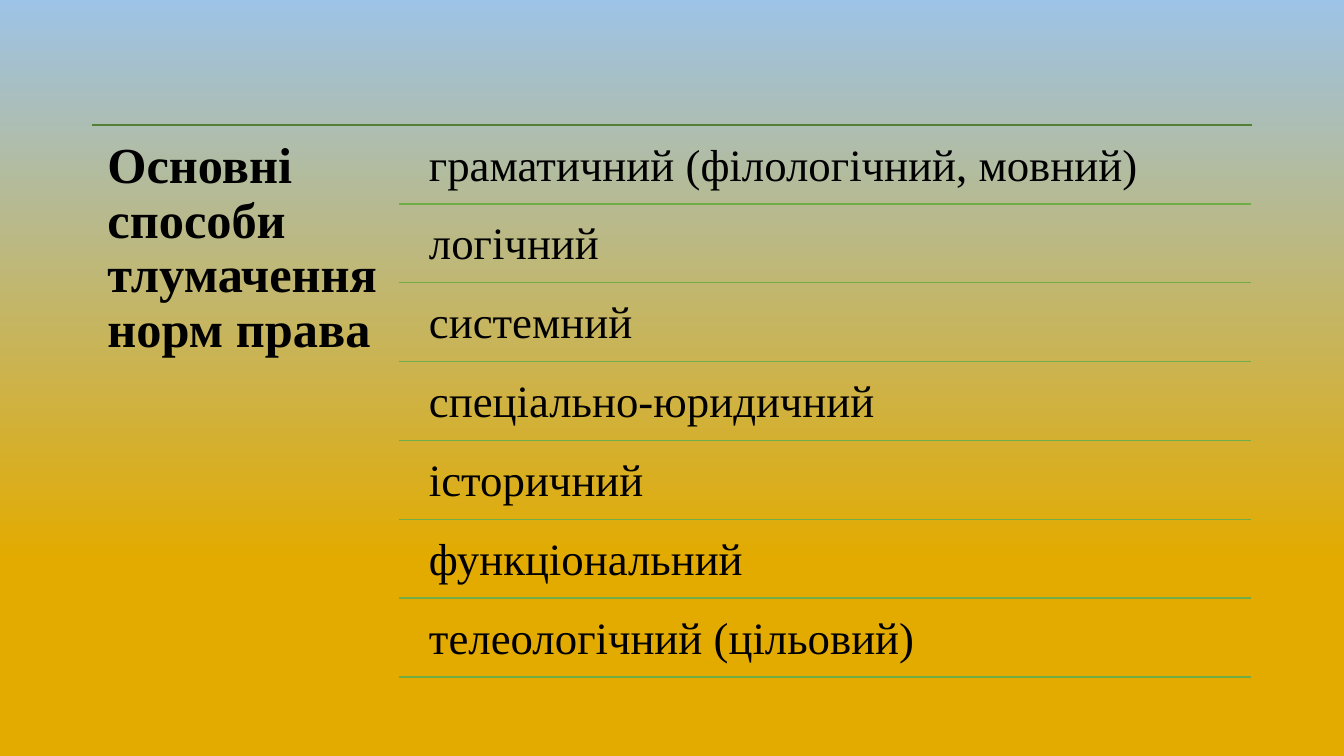
import pptx
import pptx.dml.color
import pptx.enum.shapes
import pptx.enum.text
import pptx.oxml
import pptx.util

Pt = pptx.util.Pt

COLORS = {
    "gold": "E3AB00",
    "sky": "9DC3E6",
    "dark": "538035",
    "green": "70AD47",
    "black": "000000",
}
WAYS = [
    "граматичний (філологічний, мовний)",
    "логічний",
    "системний",
    "спеціально-юридичний",
    "історичний",
    "функціональний",
    "телеологічний (цільовий)",
]


def color(name):
    return pptx.dml.color.RGBColor.from_string(COLORS[name])


def write(frame, text, size=32, bold=False, font="Times New Roman", tint="black"):
    par = frame.paragraphs[0]
    par.line_spacing = 0.9
    run = par.add_run()
    run.text = text
    run.font.name = font
    run.font.size = Pt(size)
    run.font.bold = bold
    run.font.color.rgb = color(tint)


class Page:
    def __init__(self, deck, weight=1):
        self.slide = deck.slides.add_slide(deck.slide_layouts[6])
        self.weight = weight

    def fade(self, stops, angle):
        fill = self.slide.background.fill
        fill.gradient()
        fill.gradient_angle = angle
        for stop, (place, tint) in zip(fill.gradient_stops, stops):
            stop.position = place
            stop.color.rgb = color(tint)

    def rule(self, left, right, top, tint):
        line = self.slide.shapes.add_connector(
            pptx.enum.shapes.MSO_CONNECTOR.STRAIGHT,
            Pt(left), Pt(top), Pt(right), Pt(top))
        line.line.width = Pt(self.weight)
        line.line.color.rgb = color(tint)
        line._element.spPr.append(pptx.oxml.parse_xml(
            '<a:effectLst xmlns:a="http://schemas.openxmlformats.org/drawingml/2006/main"/>'))

    def label(self, left, top, width, height, text, inset, **style):
        box = self.slide.shapes.add_textbox(Pt(left), Pt(top), Pt(width), Pt(height))
        frame = box.text_frame
        frame.word_wrap = True
        frame.vertical_anchor = pptx.enum.text.MSO_ANCHOR.TOP
        frame.margin_left = frame.margin_right = Pt(inset)
        frame.margin_top = frame.margin_bottom = Pt(inset)
        write(frame, text, **style)


def main():
    deck = pptx.Presentation()
    deck.slide_width, deck.slide_height = Pt(960), Pt(540)
    page = Page(deck)

    # Background, gold at the bottom
    page.fade([(0.26, "gold"), (1, "sky")], angle=90)

    # Heading on the left
    top, step = 89.3, 56.33
    page.rule(66, 894, top, "dark")
    page.label(66, top, 219, 397.5, "Основні способи тлумачення норм права",
               inset=10.8, size=36, bold=True)

    # List of ways, each with a rule below
    for i, way in enumerate(WAYS):
        row = top + 2.8 + i * step
        page.label(296.8, row, 597, 53.5, way, inset=9.6)
        page.rule(285, 893.3, row + 53.5, "green")

    deck.save("out.pptx")


if __name__ == "__main__":
    main()
